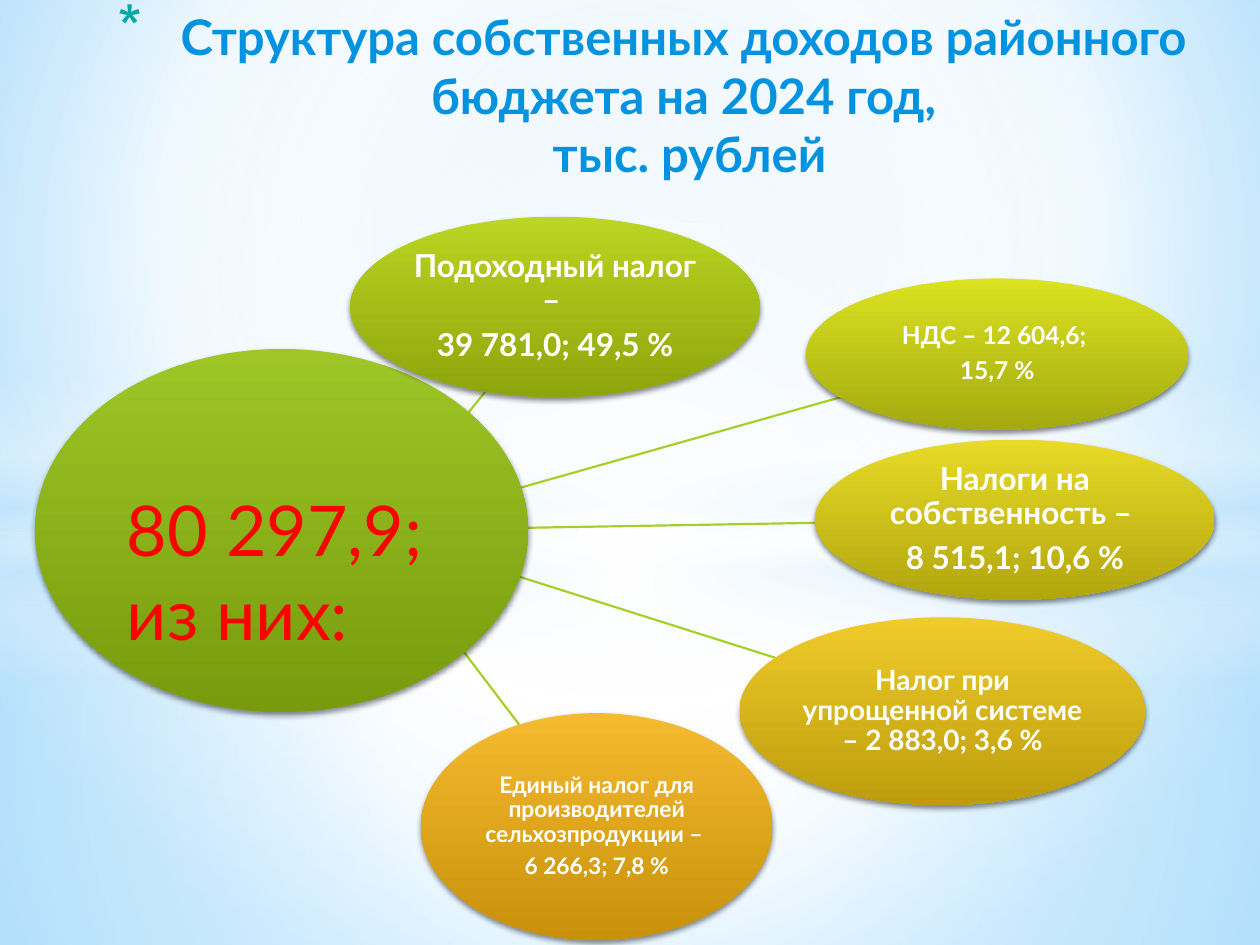
from collections import namedtuple

from lxml import etree
from pptx import Presentation
from pptx.dml.color import RGBColor
from pptx.enum.shapes import MSO_CONNECTOR, MSO_SHAPE
from pptx.enum.text import MSO_ANCHOR, MSO_AUTO_SIZE, PP_ALIGN
from pptx.oxml.ns import qn
from pptx.util import Inches, Pt

RECT, ELLIPSE = MSO_SHAPE.RECTANGLE, MSO_SHAPE.OVAL
STRAIGHT = MSO_CONNECTOR.STRAIGHT
LEFT, CENTER = PP_ALIGN.LEFT, PP_ALIGN.CENTER
TOP, MIDDLE = MSO_ANCHOR.TOP, MSO_ANCHOR.MIDDLE
NO_AUTOSIZE = MSO_AUTO_SIZE.NONE

FONT = "Lato"
WHITE = RGBColor(0xFF, 0xFF, 0xFF)
BLACK = RGBColor(0x00, 0x00, 0x00)
RED = RGBColor(0xFF, 0x00, 0x00)
TITLE_BLUE = RGBColor(0x02, 0x93, 0xE0)
BULLET_TEAL = RGBColor(0x04, 0xA8, 0xA4)
LINE_GREEN = RGBColor(0xA5, 0xD0, 0x28)
PALE = RGBColor(0xC6, 0xE7, 0xFC)
SKY = RGBColor(0xB0, 0xE0, 0xFF)
DEEP_SKY = RGBColor(0x6B, 0xC5, 0xFF)
TOTAL_GREEN = (RGBColor(0x9D, 0xC6, 0x26), RGBColor(0x77, 0x9B, 0x0D))
GREEN = (RGBColor(0xBB, 0xD5, 0x22), RGBColor(0x8E, 0xA5, 0x0C))
LIME = (RGBColor(0xDB, 0xE2, 0x21), RGBColor(0xA4, 0xAA, 0x0F))
YELLOW = (RGBColor(0xE8, 0xDA, 0x26), RGBColor(0xB2, 0xA6, 0x0F))
GOLD = (RGBColor(0xEF, 0xCB, 0x2B), RGBColor(0xBD, 0x9D, 0x0C))
ORANGE = (RGBColor(0xF4, 0xBB, 0x31), RGBColor(0xC9, 0x91, 0x09))

CENTRE = (50, 50, 50, 50)

# Overlays: shape, share of the slide, stops (position, colour, opacity), focus
HAZE = [
    (RECT, (0, 56.4, 100, 43.6),
     [(0, WHITE, 91), (37, WHITE, 76), (100, PALE, 79)], CENTRE),
    (RECT, (0, 0, 100, 56.4),
     [(0, WHITE, 89), (48, WHITE, 62), (100, PALE, 79)], CENTRE),
    (RECT, (0, 38.67, 100, 33.33),
     [(0, WHITE, 0), (29, WHITE, 30), (45, PALE, 40), (55, WHITE, 26),
      (65, PALE, 60), (100, WHITE, 0)], None),
    (ELLIPSE, (0, 23.33, 100, 74.4),
     [(0, WHITE, 100), (54, WHITE, 0)], CENTRE),
]

# Spokes: start and end points
SPOKES = [
    ((33.9, 63.87), (41.2, 76.67)),
    ((35.3, 58.53), (61.5, 69.6)),
    ((35.3, 56), (64.7, 55.33)),
    ((35.3, 53.87), (66.8, 42)),
    ((34.3, 48.4), (38.5, 41.47)),
]

# Income sources: place, colours, text size, paragraphs
SOURCES = [
    ((27.8, 22.93, 32.5, 19.07), GREEN, 18,
     ["Подоходный налог – ", "39 781,0; 49,5 %"]),
    ((64, 29.47, 30.3, 16), LIME, 14, ["НДС – 12 604,6; ", "15,7 %"]),
    ((64.7, 46.53, 31.7, 16.93), YELLOW, 18,
     ["Налоги на собственность – ", "8 515,1; 10,6 %"]),
    ((58.7, 65.33, 32.2, 19.87), GOLD, 16,
     ["Налог при упрощенной системе – 2 883,0; 3,6 %"]),
    ((33.4, 75.47, 27.9, 24), ORANGE, 13,
     ["Единый налог для производителей сельхозпродукции – ",
      "6 266,3; 7,8 %"]),
]


class Box(namedtuple("Box", "x y w h")):
    def point(self, x, y):
        """Point given in percent of this box."""
        return int(self.x + self.w * x / 100), int(self.y + self.h * y / 100)

    def share(self, x, y, w, h):
        """Box given in percent of this box."""
        return Box(*self.point(x, y), int(self.w * w / 100), int(self.h * h / 100))


def add(parent, tag, **attrs):
    return etree.SubElement(parent, qn(tag), {k: str(v) for k, v in attrs.items()})


def add_color(parent, color, opacity=100):
    clr = add(parent, "a:srgbClr", val=color)
    if opacity < 100:
        add(clr, "a:alpha", val=opacity * 1000)


def set_gradient(owner, fill, stops, focus=None):
    """Vertical gradient, or a circular one around the focus insets."""
    fill.gradient()
    grad = owner.find(".//" + qn("a:gradFill"))
    for child in list(grad):
        grad.remove(child)
    gs_list = add(grad, "a:gsLst")
    for pos, color, opacity in stops:
        add_color(add(gs_list, "a:gs", pos=pos * 1000), color, opacity)
    if focus:
        insets = {k: v * 1000 for k, v in zip("ltrb", focus)}
        add(add(grad, "a:path", path="circle"), "a:fillToRect", **insets)
    else:
        add(grad, "a:lin", ang=90 * 60000, scaled=0)


def add_filled(s, kind, box, stops, focus=None):
    sp = s.shapes.add_shape(kind, *box)
    sp.shadow.inherit = False
    sp.line.fill.background()
    set_gradient(sp._element, sp.fill, stops, focus)
    return sp


def set_text(tf, lines, font, color, para, frame):
    for key, value in frame.items():
        setattr(tf, key, value)
    for i, line in enumerate(lines):
        p = tf.paragraphs[0] if i == 0 else tf.add_paragraph()
        p.text = line
        for key, value in para.items():
            setattr(p, key, value)
        for r in p.runs:
            r.font.color.rgb = color
            for key, value in font.items():
                setattr(r.font, key, value)


def add_backdrop(s, box):
    set_gradient(s._element, s.background.fill,
                 [(0, SKY, 100), (60, WHITE, 100), (100, DEEP_SKY, 100)],
                 (20, 10, 20, 60))
    for kind, place, stops, focus in HAZE:
        add_filled(s, kind, box.share(*place), stops, focus)


def add_title(s, box):
    sp = s.shapes.title
    s.shapes._spTree.append(sp._element)  # bring above the backdrop
    for key, value in zip(("left", "top", "width", "height"), box):
        setattr(sp, key, value)
    set_text(sp.text_frame,
             ["Структура собственных доходов районного бюджета на 2024 год,"
              "\v тыс. рублей"],
             {"size": Pt(28), "name": FONT, "bold": True}, TITLE_BLUE,
             {"alignment": CENTER},
             {"vertical_anchor": TOP, "word_wrap": True,
              "auto_size": NO_AUTOSIZE})
    pPr = sp.text_frame.paragraphs[0]._p.get_or_add_pPr()
    pPr.set("marL", str(Inches(0.7)))
    pPr.set("indent", str(Inches(-0.5)))
    add_color(add(pPr, "a:buClr"), BULLET_TEAL)
    add(pPr, "a:buSzPct", val=128000)
    add(pPr, "a:buChar", char="*")


def add_bubble(s, box, colors):
    sp = add_filled(s, ELLIPSE, box, [(0, colors[0], 100), (100, colors[1], 100)])
    effects = sp._element.spPr.find(qn("a:effectLst"))
    shadow = add(effects, "a:outerShdw", blurRad=Pt(3.1), dist=Pt(1.8),
                 dir=90 * 60000, rotWithShape=0)
    add_color(shadow, BLACK, 45)
    return sp


def add_income_diagram(s, box):
    # Spokes behind the bubbles
    for start, end in SPOKES:
        line = s.shapes.add_connector(STRAIGHT, *box.point(*start), *box.point(*end))
        line.line.color.rgb = LINE_GREEN
        line.line.width = Pt(1.25)
        add(line._element.spPr, "a:effectLst")

    # Total and its sources
    add_bubble(s, box.share(2.8, 36.93, 39.1, 38.4), TOTAL_GREEN)
    margins = {f"margin_{side}": Inches(0.01)
               for side in ("left", "top", "right", "bottom")}
    for place, colors, size, lines in SOURCES:
        sp = add_bubble(s, box.share(*place), colors)
        set_text(sp.text_frame, lines,
                 {"size": Pt(size), "name": FONT, "bold": True}, WHITE,
                 {"alignment": CENTER, "line_spacing": 0.9,
                  "space_after": Pt(size * 0.35)},
                 {"vertical_anchor": MIDDLE, "word_wrap": True, **margins})

    # Caption of the total
    tb = s.shapes.add_textbox(*box.share(9.1, 50.8, 26, 19.33))
    set_text(tb.text_frame, ["80 297,9;", "из них:"],
             {"size": Pt(40), "name": FONT}, RED,
             {"alignment": LEFT}, {"word_wrap": True})


def main():
    prs = Presentation()
    prs.slide_width, prs.slide_height = Inches(10), Inches(7.5)
    s = prs.slides.add_slide(prs.slide_layouts[5])
    page = Box(0, 0, prs.slide_width, prs.slide_height)
    add_backdrop(s, page)
    add_title(s, page.share(5.1, 0, 91.3, 26.13))
    add_income_diagram(s, page)
    prs.save("out.pptx")


if __name__ == "__main__":
    main()
